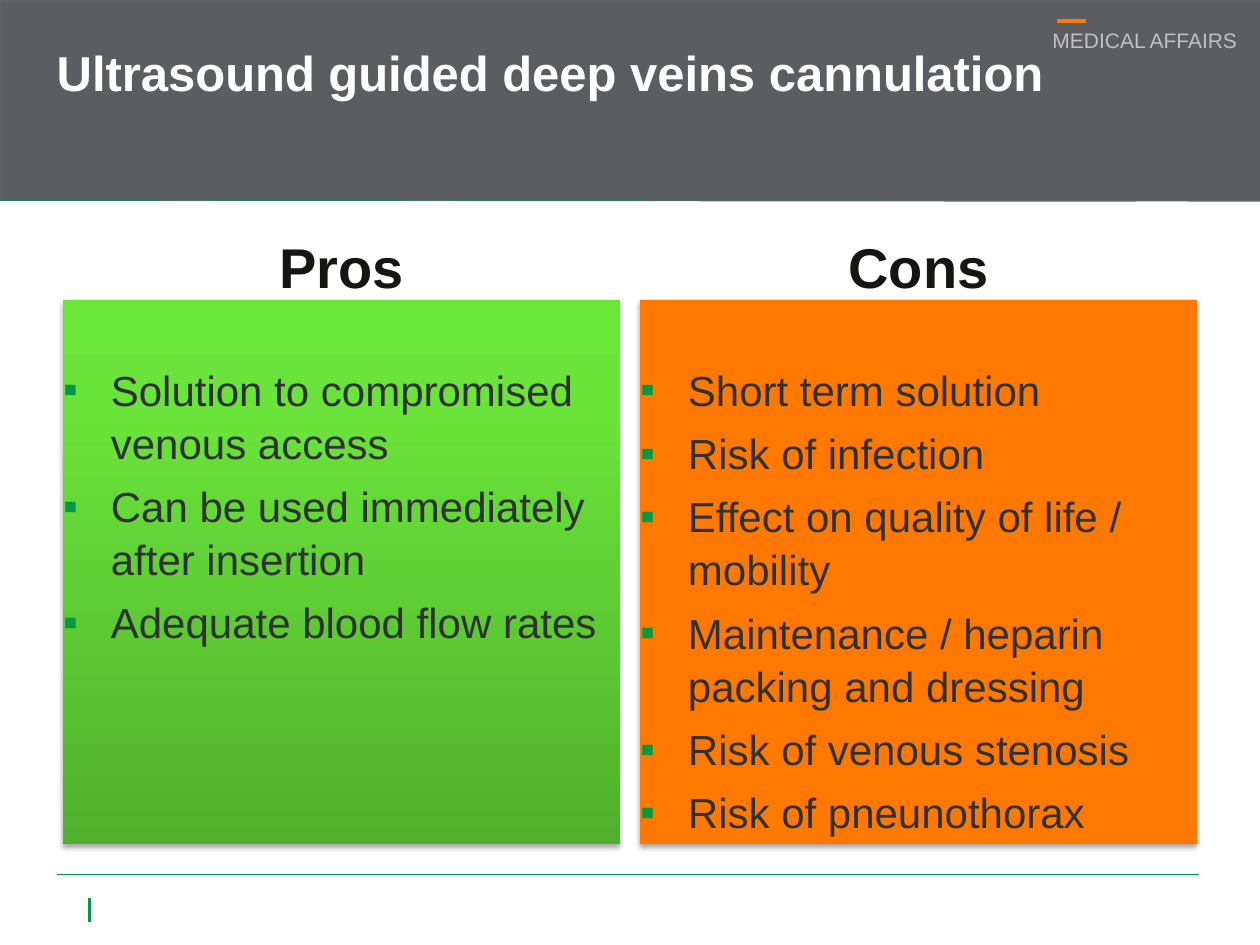
"""Build a pros and cons slide on ultrasound guided deep veins cannulation."""
from dataclasses import dataclass

from lxml.etree import SubElement
from pptx import Presentation
from pptx.dml.color import RGBColor
from pptx.enum.shapes import MSO_CONNECTOR, MSO_SHAPE
from pptx.enum.text import MSO_ANCHOR, MSO_AUTO_SIZE, PP_ALIGN
from pptx.oxml.ns import qn
from pptx.util import Inches, Pt


@dataclass(frozen=True)
class Theme:
    font: str = "Arial"
    band: str = "5C5D60"
    band_edge: str = "616365"
    tag: str = "BFC1C2"
    green: str = "009A44"
    orange: str = "FF7900"
    heading: str = "151514"
    body: str = "303132"
    white: str = "FFFFFF"
    shadow: str = "000000"
    pros_stops: tuple = ((0, "51B02D"), (80, "6AE43A"), (100, "69E837"))
    title_size: int = 28
    heading_size: int = 32
    body_size: int = 24
    tag_size: int = 12


def add_xml(parent, tag, **attributes):
    return SubElement(parent, qn(tag), {key: str(value) for key, value in attributes.items()})


def format_text(shape, size, color, bold=False, align=PP_ALIGN.LEFT, anchor=MSO_ANCHOR.TOP, spacing=1.0):
    frame = shape.text_frame
    frame.word_wrap = True
    frame.auto_size = MSO_AUTO_SIZE.NONE
    frame.vertical_anchor = anchor
    frame.margin_left = frame.margin_top = frame.margin_right = frame.margin_bottom = 0
    for index, paragraph in enumerate(frame.paragraphs):
        paragraph.alignment = align
        paragraph.line_spacing = spacing
        paragraph.space_before = Pt(6 if index else 0)
        for run in paragraph.runs:
            run.font.name = theme.font
            run.font.size = Pt(size)
            run.font.bold = bold
            run.font.color.rgb = RGBColor.from_string(color)


theme = Theme()
presentation = Presentation()
presentation.slide_width = Inches(10)
presentation.slide_height = Inches(7.5)
slide = presentation.slides.add_slide(presentation.slide_layouts[4])
shapes = slide.shapes

band = shapes.add_shape(MSO_SHAPE.RECTANGLE, 0, 0, Inches(10), Inches(1.59))
band.shadow.inherit = False
band.fill.solid()
band.fill.fore_color.rgb = RGBColor.from_string(theme.band)
band.line.color.rgb = RGBColor.from_string(theme.band_edge)
band.line.width = Pt(0.25)

department = shapes.add_textbox(Inches(8.32), Inches(0.24), Inches(1.5), Inches(0.18))
department.text_frame.text = "MEDICAL AFFAIRS"
format_text(department, theme.tag_size, theme.tag, align=PP_ALIGN.RIGHT, spacing=0.9)

backdrop = [band, department]
for left, top, right, bottom, color, width in (
    (0.45, 6.94, 9.52, 6.94, theme.green, 0.25),
    (0.71, 7.13, 0.71, 7.32, theme.green, 1.5),
    (0, 1.59, 10, 1.6, theme.green, 0.25),
    (8.39, 0.17, 8.62, 0.17, theme.orange, 2.25),
):
    rule = shapes.add_connector(
        MSO_CONNECTOR.STRAIGHT, Inches(left), Inches(top), Inches(right), Inches(bottom)
    )
    rule.line.color.rgb = RGBColor.from_string(color)
    rule.line.width = Pt(width)
    add_xml(rule._element.spPr, "a:effectLst")
    backdrop.append(rule)

for position, part in enumerate(backdrop, start=2):
    shapes._spTree.insert(position, part._element)

title = shapes.title
title.left, title.top, title.width, title.height = Inches(0.45), Inches(0.39), Inches(9.07), Inches(1.19)
title.text_frame.text = "Ultrasound guided deep veins cannulation"
format_text(title, theme.title_size, theme.white, bold=True, spacing=0.9)

pros = ("Solution to compromised venous access", "Can be used immediately after insertion",
        "Adequate blood flow rates")
cons = ("Short term solution", "Risk of infection", "Effect on quality of life / mobility",
        "Maintenance / heparin packing and dressing", "Risk of venous stenosis", "Risk of pneunothorax")

for column, (name, points) in enumerate((("Pros", pros), ("Cons", cons))):
    left = Inches(0.5 + 4.58 * column)
    heading = slide.placeholders[1 + 2 * column]
    heading.left, heading.top, heading.width, heading.height = left, Inches(1.68), Inches(4.42), Inches(0.7)
    heading.text_frame.text = name
    format_text(heading, theme.heading_size, theme.heading, bold=True,
                align=PP_ALIGN.CENTER, anchor=MSO_ANCHOR.BOTTOM)

    panel = slide.placeholders[2 + 2 * column]
    panel.left, panel.top, panel.width, panel.height = left, Inches(2.38), Inches(4.42), Inches(4.32)
    properties = panel._element.spPr
    if name == "Pros":
        gradient = add_xml(properties, "a:gradFill", rotWithShape=1)
        stops = add_xml(gradient, "a:gsLst")
        for percent, color in theme.pros_stops:
            add_xml(add_xml(stops, "a:gs", pos=percent * 1000), "a:srgbClr", val=color)
        add_xml(gradient, "a:lin", ang=270 * 60000, scaled=0)
    else:
        panel.fill.solid()
        panel.fill.fore_color.rgb = RGBColor.from_string(theme.orange)
    effects = add_xml(properties, "a:effectLst")
    shadow = add_xml(effects, "a:outerShdw", blurRad=Pt(3.1), dist=Pt(1.8), dir=90 * 60000, rotWithShape=0)
    add_xml(add_xml(shadow, "a:srgbClr", val=theme.shadow), "a:alpha", val=35000)

    panel.text_frame.text = "\n".join(points)
    for paragraph in panel.text_frame.paragraphs:
        settings = paragraph._p.get_or_add_pPr()
        settings.set("marL", str(Inches(0.38)))
        settings.set("indent", str(Inches(-0.38)))
        add_xml(add_xml(settings, "a:buClr"), "a:srgbClr", val=theme.green)
        add_xml(settings, "a:buFont", typeface=theme.font)
        add_xml(settings, "a:buChar", char="▪")
    format_text(panel, theme.body_size, theme.body, spacing=1.05)
    panel.text_frame.margin_top = Inches(0.49)

presentation.save("out.pptx")
